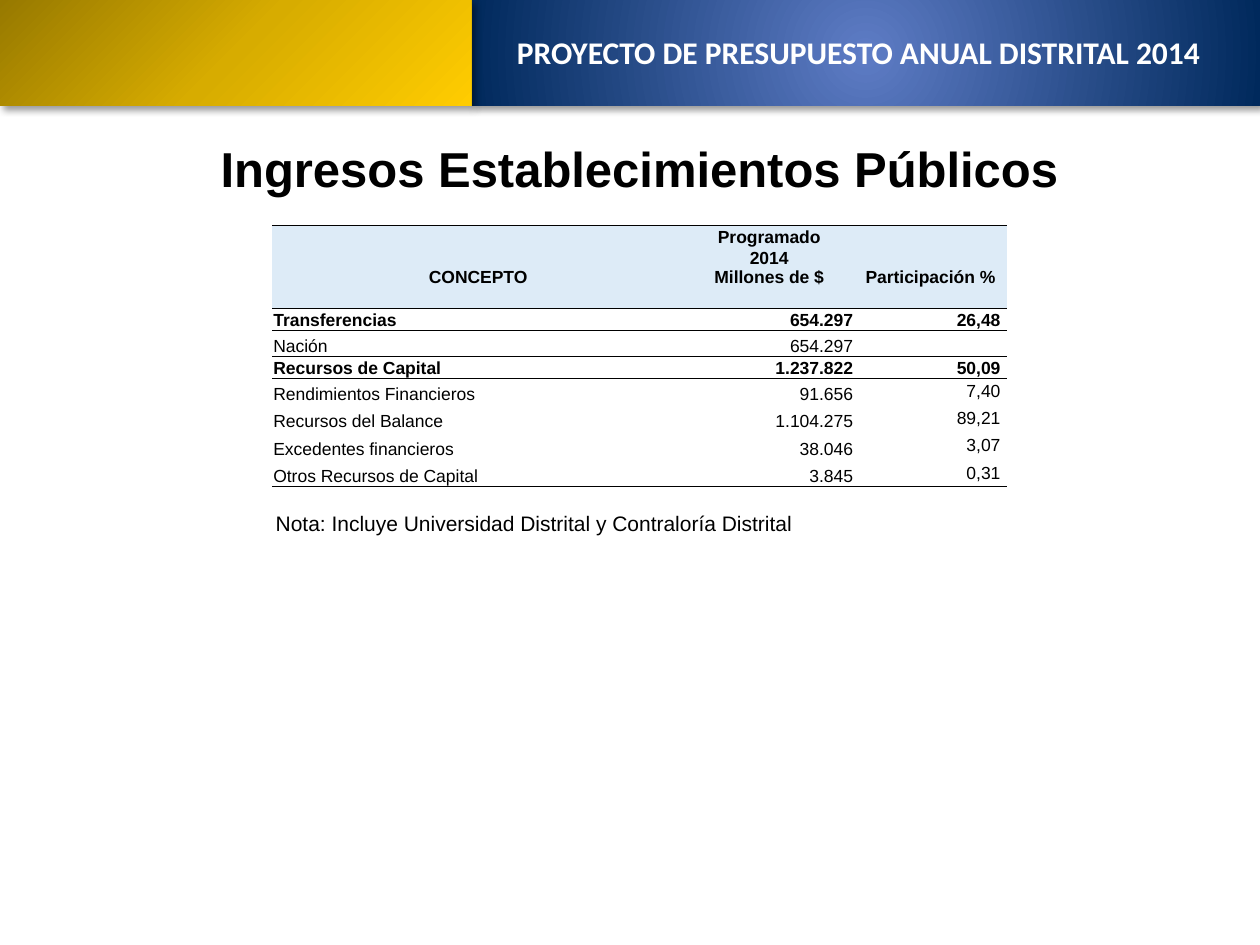
from dataclasses import dataclass

from lxml import etree
from pptx import Presentation
from pptx.dml.color import RGBColor
from pptx.enum import shapes, text
from pptx.oxml import ns
from pptx.util import Inches, Pt

A = ns.nsdecls("a")
NO_STYLE = "{2D5ABB26-0587-4C30-8999-92F81FD0307C}"
LEFT, CENTER, RIGHT = text.PP_ALIGN.LEFT, text.PP_ALIGN.CENTER, text.PP_ALIGN.RIGHT
BOTTOM, MIDDLE = text.MSO_ANCHOR.BOTTOM, text.MSO_ANCHOR.MIDDLE


@dataclass
class Banner:
    left: float
    width: float
    stops: list[tuple[int, str]]
    direction: str


@dataclass
class Row:
    height: float
    values: tuple[str, str, str]
    header: bool = False
    bold: bool = False
    rule_above: bool = False
    rule_below: bool = False
    share_anchor: text.MSO_ANCHOR = BOTTOM


BANNERS = [
    Banner(3.74, 6.26, [(0, "5E7CC5"), (100, "00295C")],
           '<a:path path="circle"><a:fillToRect l="50000" t="50000" r="50000" b="50000"/></a:path>'),
    Banner(0, 3.74, [(0, "977900"), (50, "D7AC00"), (100, "FFCC00")],
           '<a:lin ang="2700000" scaled="0"/>'),
]
COLUMNS = [3.27, 1.35, 1.21]
ROWS = [
    Row(0.17, ("", "Programado", ""), header=True, bold=True, rule_above=True),
    Row(0.32, ("CONCEPTO", "2014\nMillones de $", "Participación %"), header=True, bold=True),
    Row(0.17, ("", "", ""), header=True, bold=True, rule_below=True),
    Row(0.17, ("Transferencias", "654.297", "26,48"), bold=True, rule_above=True),
    Row(0.21, ("Nación", "654.297", ""), rule_below=True),
    Row(0.17, ("Recursos de Capital", "1.237.822", "50,09"), bold=True, rule_above=True),
    Row(0.21, ("Rendimientos Financieros", "91.656", "7,40"), share_anchor=MIDDLE),
    Row(0.21, ("Recursos del Balance", "1.104.275", "89,21"), share_anchor=MIDDLE),
    Row(0.23, ("Excedentes financieros", "38.046", "3,07"), share_anchor=MIDDLE),
    Row(0.21, ("Otros Recursos de Capital", "3.845", "0,31"), rule_below=True, share_anchor=MIDDLE),
]


def rgb(color: str) -> RGBColor:
    return RGBColor.from_string(color)


def style(p, size: float, color: str = "000000", name: str = "Arial",
          bold: bool = False, align=LEFT) -> None:
    p.alignment = align
    p.space_before = Pt(0)
    p.font.size = Pt(size)
    p.font.name = name
    p.font.bold = bold
    p.font.color.rgb = rgb(color)


def place(sp, left: float, top: float, width: float, height: float) -> None:
    sp.left, sp.top = Inches(left), Inches(top)
    sp.width, sp.height = Inches(width), Inches(height)
    sp.text_frame.word_wrap = True
    sp.text_frame.auto_size = text.MSO_AUTO_SIZE.NONE


def add_banner(s, banner: Banner) -> None:
    sp = s.shapes.add_shape(shapes.MSO_SHAPE.RECTANGLE, Inches(banner.left), 0,
                            Inches(banner.width), Inches(0.84))
    sp.line.fill.background()
    sp.shadow.inherit = False
    sp.fill.gradient()
    props = sp._element.spPr
    stops = "".join(f'<a:gs pos="{pos * 1000}"><a:srgbClr val="{rgb(color)}"/></a:gs>'
                    for pos, color in banner.stops)
    gradient = etree.fromstring(
        f'<a:gradFill {A} rotWithShape="1"><a:gsLst>{stops}</a:gsLst>{banner.direction}</a:gradFill>')
    props.replace(props.find(ns.qn("a:gradFill")), gradient)
    props.find(ns.qn("a:effectLst")).append(etree.fromstring(
        f'<a:outerShdw {A} blurRad="{Pt(4)}" dist="{Pt(3)}" dir="2700000" algn="tl" rotWithShape="0">'
        '<a:srgbClr val="000000"><a:alpha val="40000"/></a:srgbClr></a:outerShdw>'))
    s.shapes._spTree.insert(2, sp._element)


def add_rule(cell, side: str) -> None:
    cell._tc.get_or_add_tcPr().append(etree.fromstring(
        f'<a:{side} {A} w="{Pt(0.5)}"><a:solidFill><a:srgbClr val="{rgb("000000")}"/>'
        f'</a:solidFill></a:{side}>'))


def fill_cell(cell, row: Row, column: int) -> None:
    if row.rule_above:
        add_rule(cell, "lnT")
    if row.rule_below:
        add_rule(cell, "lnB")
    share = column == 2 and not row.header
    if share:
        cell.fill.background()
    else:
        cell.fill.solid()
        cell.fill.fore_color.rgb = rgb("DDEBF7" if row.header else "FFFFFF")
    cell.margin_left = cell.margin_top = Inches(0.01)
    cell.margin_right = Inches(0.05 if share else 0.01)
    cell.margin_bottom = 0
    cell.vertical_anchor = row.share_anchor if share else BOTTOM
    cell.text = row.values[column]
    align = CENTER if row.header else (LEFT, RIGHT, RIGHT)[column]
    for p in cell.text_frame.paragraphs:
        style(p, 10, bold=row.bold, align=align)
        if not p.runs:
            etree.SubElement(p._p, ns.qn("a:endParaRPr")).set("sz", "1000")


def add_income_table(s) -> None:
    frame = s.shapes.add_table(len(ROWS), len(COLUMNS), Inches(2.16), Inches(1.79),
                               Inches(sum(COLUMNS)), Inches(sum(row.height for row in ROWS)))
    table = frame.table
    table.first_row = table.horz_banding = False
    table._tbl.tblPr.find(ns.qn("a:tableStyleId")).text = NO_STYLE
    for column, width in zip(table.columns, COLUMNS):
        column.width = Inches(width)
    for i, row in enumerate(ROWS):
        table.rows[i].height = Inches(row.height)
        for j in range(len(COLUMNS)):
            fill_cell(table.cell(i, j), row, j)


def main() -> None:
    prs = Presentation()
    prs.slide_width, prs.slide_height = Inches(10), Inches(7.5)
    s = prs.slides.add_slide(prs.slide_layouts[1])
    for banner in reversed(BANNERS):
        add_banner(s, banner)

    title = s.shapes.title
    place(title, 1.06, 1.05, 8.03, 0.57)
    title.text_frame.text = "Ingresos Establecimientos Públicos"
    style(title.text_frame.paragraphs[0], 28, bold=True, align=CENTER)

    heading = s.placeholders[1]
    place(heading, 3.9, 0.21, 5.83, 0.46)
    heading.text_frame.text = "PROYECTO DE PRESUPUESTO ANUAL DISTRITAL 2014"
    p = heading.text_frame.paragraphs[0]
    props = p._p.get_or_add_pPr()
    props.set("marL", "0")
    props.set("indent", "0")
    etree.SubElement(props, ns.qn("a:buNone"))
    style(p, 18, "FFFFFF", "Calibri", bold=True, align=CENTER)

    add_income_table(s)

    note = s.shapes.add_textbox(0, 0, 0, 0)
    place(note, 2.09, 4, 5.04, 0.3)
    note.text_frame.text = "Nota: Incluye Universidad Distrital y Contraloría Distrital"
    style(note.text_frame.paragraphs[0], 12)

    prs.save("out.pptx")


if __name__ == "__main__":
    main()
